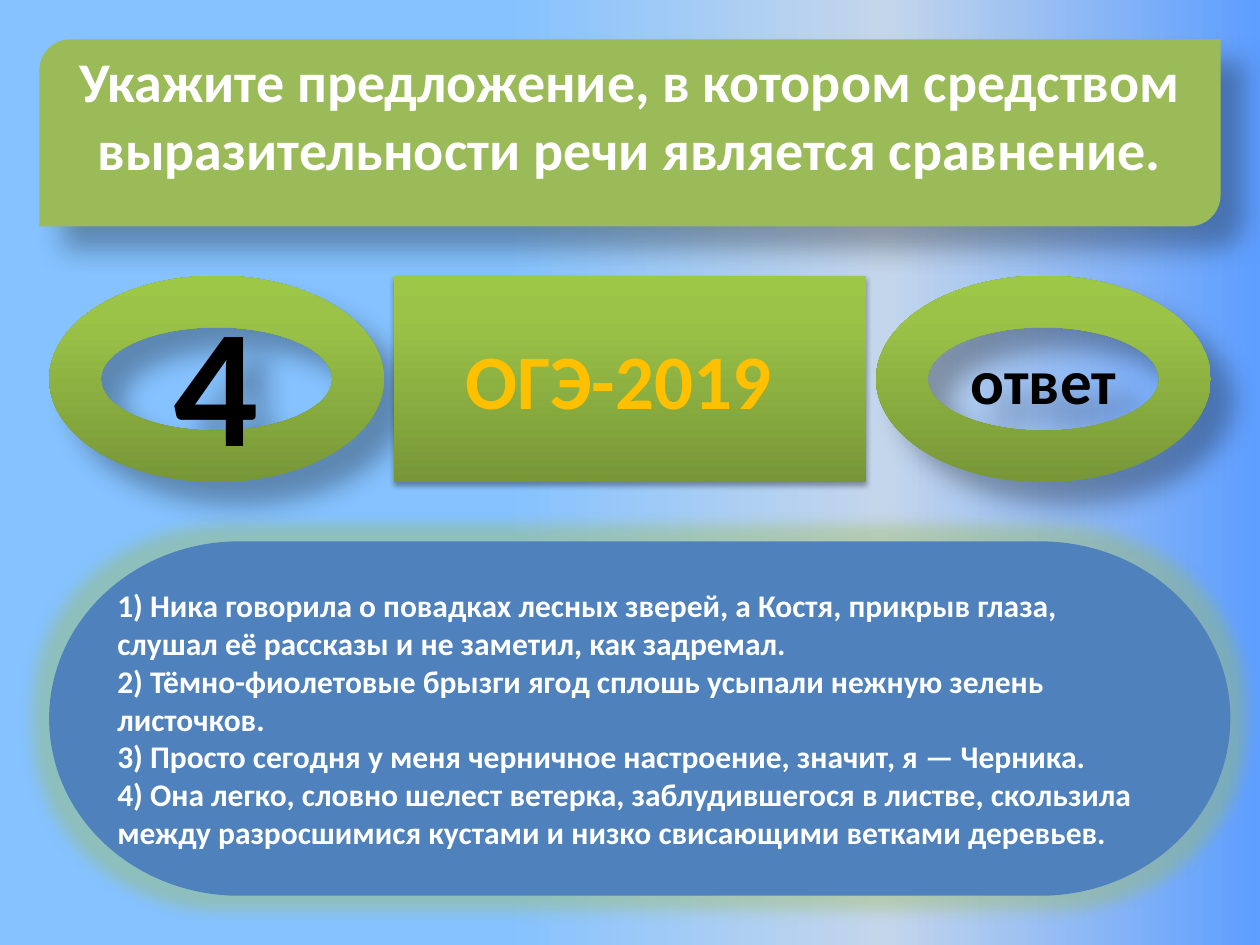
from copy import deepcopy
from dataclasses import dataclass
from typing import Optional

from lxml.etree import SubElement
from pptx import Presentation
from pptx.dml.color import RGBColor
from pptx.enum.shapes import MSO_SHAPE as Shape
from pptx.enum.text import MSO_ANCHOR as Anchor, MSO_AUTO_SIZE as AutoSize, PP_ALIGN as Align
from pptx.oxml.ns import qn
from pptx.util import Inches, Pt

CELL = Inches(10) // 128

WHITE = RGBColor(0xFF, 0xFF, 0xFF)
BLACK = RGBColor(0x00, 0x00, 0x00)
AMBER = RGBColor(0xFF, 0xC0, 0x00)
GREEN = RGBColor(0x9B, 0xBB, 0x59)
BLUE = RGBColor(0x4F, 0x81, 0xBD)
OLIVE = RGBColor(0x77, 0x97, 0x37)
LIME = RGBColor(0x9B, 0xC3, 0x48)
LIGHT_LIME = RGBColor(0x9D, 0xC7, 0x46)
SKY = RGBColor(0x85, 0xC2, 0xFF)
MIST = RGBColor(0xC4, 0xD6, 0xEB)
AZURE = RGBColor(0x5E, 0x9E, 0xFF)

BUTTON_STOPS = ((0, OLIVE), (80, LIME), (100, LIGHT_LIME))
SKY_STOPS = ((0, SKY), (40, SKY), (70, MIST), (100, AZURE))

QUESTION = "Укажите предложение, в котором средством выразительности речи является сравнение."
OPTIONS = (
    "1) Ника говорила о повадках лесных зверей, а Костя, прикрыв глаза, "
    "слушал её рассказы и не заметил, как задремал.",
    "2) Тёмно-фиолетовые брызги ягод сплошь усыпали нежную зелень листочков.",
    "3) Просто сегодня у меня черничное настроение, значит, я — Черника.",
    "4) Она легко, словно шелест ветерка, заблудившегося в листве, скользила "
    "между разросшимися кустами и низко свисающими ветками деревьев.",
)


@dataclass(frozen=True)
class Box:
    col: int
    row: int
    cols: int
    rows: int

    def emu(self) -> tuple:
        return tuple(n * CELL for n in (self.col, self.row, self.cols, self.rows))


@dataclass(frozen=True)
class Effect:
    tag: str
    color: RGBColor
    alpha: int
    radius: float
    dist: float = 0
    angle: int = 0


@dataclass(frozen=True)
class Button:
    kind: Shape
    box: Box
    label: str
    size: int
    color: RGBColor
    align: Align
    effect: Effect


DEEP = Effect("outerShdw", BLACK, 30, 15, 18, 45)
SOFT = Effect("outerShdw", BLACK, 35, 3.1, 1.8, 90)
GLOW = Effect("glow", GREEN, 40, 18)

QUESTION_BOX = Box(4, 4, 120, 19)
OPTIONS_BOX = Box(5, 55, 120, 36)
BUTTONS = (
    Button(Shape.DONUT, Box(5, 28, 34, 21), "4", 96, BLACK, Align.CENTER, DEEP),
    Button(Shape.DONUT, Box(89, 28, 34, 21), "ответ", 36, BLACK, Align.CENTER, DEEP),
    Button(Shape.FLOWCHART_PREDEFINED_PROCESS, Box(40, 28, 48, 21), "ОГЭ-2019", 44,
           AMBER, Align.LEFT, SOFT),
)


def paint_gradient(fill, element, stops: tuple, angle: int) -> None:
    fill.gradient()
    fill.gradient_angle = angle
    gs_list = next(element.iter(qn("a:gsLst")))
    for _ in stops[2:]:
        gs_list.append(deepcopy(gs_list[0]))
    for stop, (pos, color) in zip(fill.gradient_stops, stops):
        stop.position = pos / 100
        stop.color.rgb = color


def add_effect(sp, effect: Effect) -> None:
    sp.shadow.inherit = False
    node = SubElement(sp._element.spPr.find(qn("a:effectLst")), qn(f"a:{effect.tag}"))
    if effect.tag == "glow":
        node.set("rad", str(Pt(effect.radius)))
    else:
        node.set("blurRad", str(Pt(effect.radius)))
        node.set("dist", str(Pt(effect.dist)))
        node.set("dir", str(effect.angle * 60000))
        node.set("algn", "tl")
        node.set("rotWithShape", "0")
    clr = SubElement(node, qn("a:srgbClr"), val=str(effect.color))
    SubElement(clr, qn("a:alpha"), val=str(effect.alpha * 1000))


def add_panel(slide, kind: Shape, box: Box, effect: Effect, color: Optional[RGBColor] = None):
    sp = slide.shapes.add_shape(kind, *box.emu())
    sp.line.fill.background()
    if color is None:
        paint_gradient(sp.fill, sp._element, BUTTON_STOPS, 90)
    else:
        sp.fill.solid()
        sp.fill.fore_color.rgb = color
    add_effect(sp, effect)
    return sp


def write(sp, lines: tuple, size: int, color: RGBColor, align: Align) -> None:
    tf = sp.text_frame
    tf.text = "\n".join(lines)
    tf.word_wrap = True
    tf.auto_size = AutoSize.NONE
    tf.vertical_anchor = Anchor.MIDDLE
    for p in tf.paragraphs:
        p.alignment = align
        p.space_before = Pt(0)
        p.font.name = "Calibri"
        p.font.size = Pt(size)
        p.font.bold = True
        p.font.color.rgb = color


def place(slide, sp, box: Box, side: float, bottom: float) -> None:
    sp.left, sp.top, sp.width, sp.height = box.emu()
    tf = sp.text_frame
    tf.margin_left = tf.margin_right = Inches(side)
    tf.margin_bottom = Inches(bottom)
    slide.shapes._spTree.append(sp._element)


def main() -> None:
    """Build the quiz slide and save it."""
    prs = Presentation()
    prs.slide_width, prs.slide_height = 128 * CELL, 96 * CELL
    slide = prs.slides.add_slide(prs.slide_layouts[1])
    paint_gradient(slide.background.fill, slide._element, SKY_STOPS, 0)

    add_panel(slide, Shape.ROUND_2_DIAG_RECTANGLE, QUESTION_BOX, DEEP, GREEN)
    title = slide.shapes.title
    write(title, (QUESTION,), 32, WHITE, Align.CENTER)
    place(slide, title, QUESTION_BOX, 0.17, 0.35)

    for b in BUTTONS:
        sp = add_panel(slide, b.kind, b.box, b.effect)
        write(sp, (b.label,), b.size, b.color, b.align)

    add_panel(slide, Shape.FLOWCHART_TERMINATOR, OPTIONS_BOX, GLOW, BLUE)
    body = slide.placeholders[1]
    write(body, OPTIONS, 18, WHITE, Align.LEFT)
    for p in body.text_frame.paragraphs:
        p_pr = p._p.get_or_add_pPr()
        p_pr.set("marL", "0")
        p_pr.set("indent", "0")
        p_pr.insert_element_before(p_pr.makeelement(qn("a:buNone")), "a:tabLst", "a:defRPr", "a:extLst")
    place(slide, body, OPTIONS_BOX, 0.54, 0.05)

    prs.save("out.pptx")


if __name__ == "__main__":
    main()
